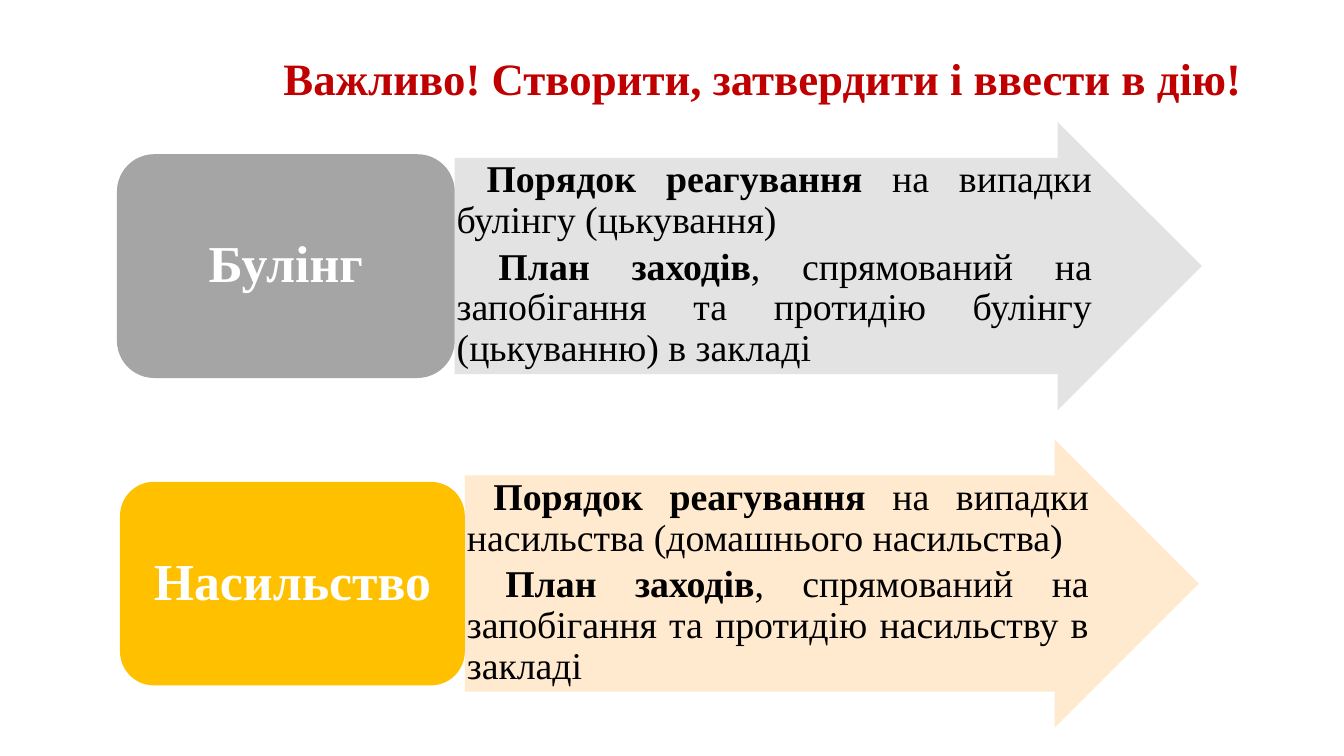
from dataclasses import dataclass

from lxml import etree
from pptx import Presentation
from pptx import util as u
from pptx.dml.color import RGBColor
from pptx.enum import shapes, text
from pptx.oxml.ns import qn

FONT = "Times New Roman"
COLORS = {
    "title": "C00000",
    "body": "000000",
    "label": "FFFFFF",
    "gray": "A5A5A5",
    "light_gray": "E1E1E1",
    "amber": "FFC000",
    "light_amber": "FFE8CB",
}
ARROW_HEIGHT = 2.86
TEXT_SHORTER_BY = 1.07  # part of the arrow head left free of text


@dataclass
class Box:
    left: float
    top: float
    width: float
    height: float

    def lengths(self) -> list:
        return [u.Inches(n) for n in (self.left, self.top, self.width, self.height)]


@dataclass
class Topic:
    label: str
    label_box: Box
    label_color: str
    arrow_box: Box
    arrow_color: str
    measures: list[tuple[str, str]]  # bold start, plain rest


TOPICS = [
    Topic(
        "Булінг", Box(1.16, 1.53, 3.35, 2.22), "gray",
        Box(4.51, 1.21, 7.41, ARROW_HEIGHT), "light_gray",
        [
            (" Порядок реагування", " на випадки булінгу (цькування)"),
            (" План заходів", ", спрямований на запобігання та протидію булінгу (цькуванню) в закладі"),
        ],
    ),
    Topic(
        "Насильство", Box(1.19, 4.78, 3.42, 2.02), "amber",
        Box(4.61, 4.36, 7.28, ARROW_HEIGHT), "light_amber",
        [
            (" Порядок реагування ", "на випадки насильства (домашнього насильства)"),
            (" План заходів", ", спрямований на запобігання та протидію насильству в закладі"),
        ],
    ),
]


def add_run(paragraph, words: str, size: int, color: str, bold: bool) -> None:
    run = paragraph.add_run()
    run.text = words
    run.font.name = FONT
    run.font.size = u.Pt(size)
    run.font.bold = bold
    run.font.color.rgb = RGBColor.from_string(COLORS[color])


def set_frame(frame, anchor, side: float, edge: float) -> None:
    frame.word_wrap = True
    frame.auto_size = text.MSO_AUTO_SIZE.NONE
    frame.vertical_anchor = anchor
    frame.margin_left = frame.margin_right = u.Inches(side)
    frame.margin_top = frame.margin_bottom = u.Inches(edge)


def add_filled_shape(slide, kind, box: Box, color: str):
    shape = slide.shapes.add_shape(kind, *box.lengths())
    shape.shadow.inherit = False
    shape.fill.solid()
    shape.fill.fore_color.rgb = RGBColor.from_string(COLORS[color])
    shape.line.fill.background()
    return shape


def add_title(slide, words: str) -> None:
    title = slide.shapes.title
    title.left, title.top, title.width, title.height = Box(0.92, 0.4, 11.5, 0.81).lengths()
    set_frame(title.text_frame, text.MSO_ANCHOR.MIDDLE, 0.1, 0.05)
    paragraph = title.text_frame.paragraphs[0]
    paragraph.alignment = text.PP_ALIGN.RIGHT
    paragraph.line_spacing = 0.9
    add_run(paragraph, words, 32, "title", True)


def add_arrow(slide, topic: Topic) -> None:
    box = topic.arrow_box
    arrow = add_filled_shape(slide, shapes.MSO_SHAPE.RIGHT_ARROW, box, topic.arrow_color)
    arrow.adjustments[0] = 0.75
    arrow.adjustments[1] = 0.5
    color = arrow.fill._xPr.find(qn("a:solidFill"))[0]
    etree.SubElement(color, qn("a:alpha"), val="90000")

    # Text covers the arrow's shaft, three quarters of its height
    text_box = Box(box.left, box.top + box.height / 8,
                   box.width - TEXT_SHORTER_BY, box.height * 0.75)
    frame = slide.shapes.add_textbox(*text_box.lengths()).text_frame
    set_frame(frame, text.MSO_ANCHOR.TOP, 0.02, 0.02)
    for index, (start, rest) in enumerate(topic.measures):
        paragraph = frame.add_paragraph() if index else frame.paragraphs[0]
        paragraph.alignment = text.PP_ALIGN.JUSTIFY
        paragraph.line_spacing = 0.9
        paragraph.space_after = u.Pt(4)
        add_run(paragraph, start, 27, "body", True)
        add_run(paragraph, rest, 27, "body", False)


def add_label(slide, topic: Topic) -> None:
    label = add_filled_shape(slide, shapes.MSO_SHAPE.ROUNDED_RECTANGLE,
                             topic.label_box, topic.label_color)
    set_frame(label.text_frame, text.MSO_ANCHOR.MIDDLE, 0.15, 0.08)
    paragraph = label.text_frame.paragraphs[0]
    paragraph.alignment = text.PP_ALIGN.CENTER
    paragraph.line_spacing = 0.9
    add_run(paragraph, topic.label, 37, "label", True)


def main() -> None:
    presentation = Presentation()
    presentation.slide_width = u.Inches(13.33)
    presentation.slide_height = u.Inches(7.5)
    slide = presentation.slides.add_slide(presentation.slide_layouts[5])  # title only

    add_title(slide, "Важливо! Створити, затвердити і ввести в дію!")
    for topic in TOPICS:
        add_arrow(slide, topic)
        add_label(slide, topic)

    presentation.save("out.pptx")


if __name__ == "__main__":
    main()
